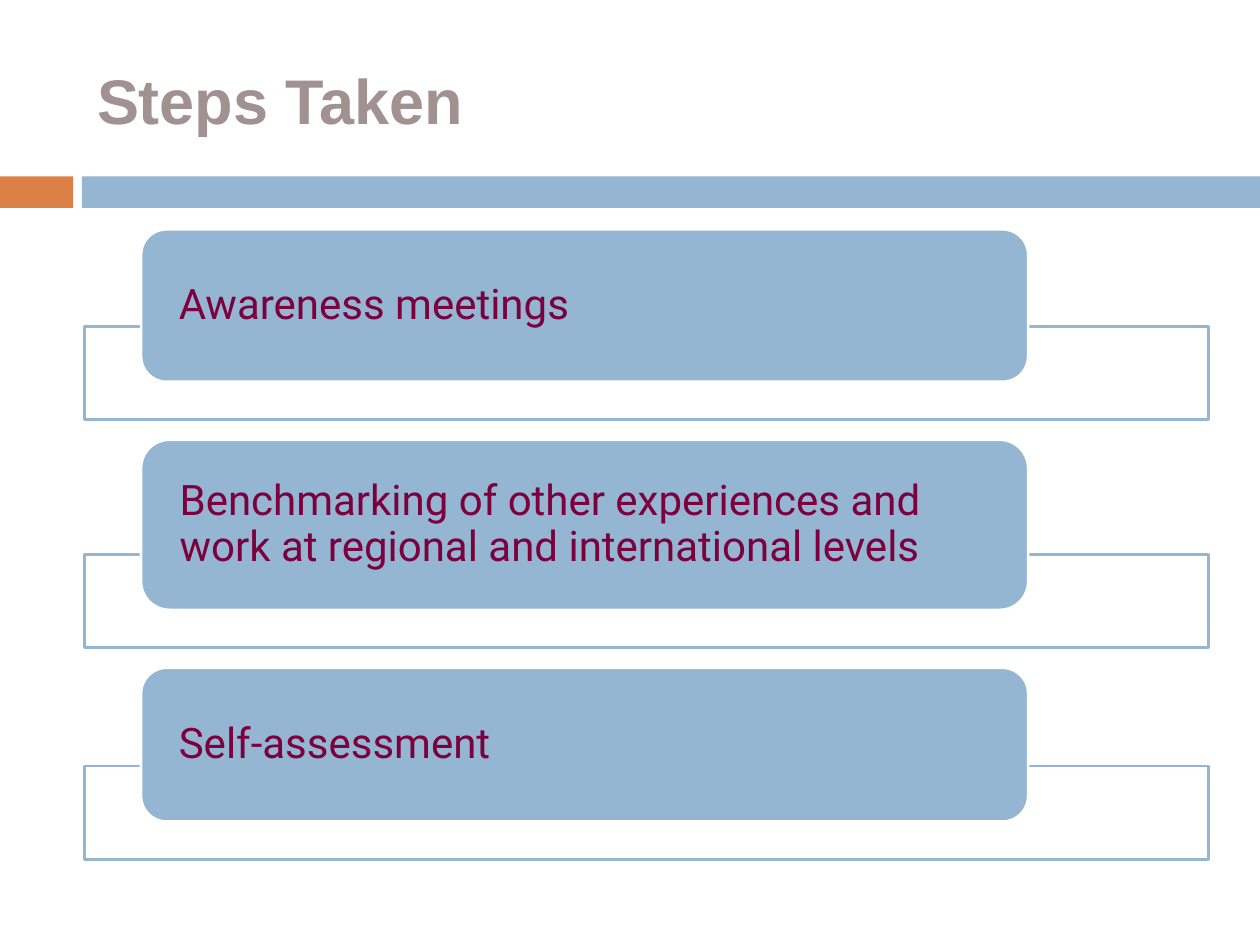
import pptx
import pptx.util
import pptx.dml.color
import pptx.enum.shapes
import pptx.enum.text

Inches = pptx.util.Inches
Pt = pptx.util.Pt
MSO_SHAPE = pptx.enum.shapes.MSO_SHAPE
MSO_ANCHOR = pptx.enum.text.MSO_ANCHOR
PP_ALIGN = pptx.enum.text.PP_ALIGN

TITLE_ONLY_LAYOUT = 5


def rgb(hex_string):
    return pptx.dml.color.RGBColor.from_string(hex_string)


class SlideBuilder:
    BLUE = "94B6D2"
    ORANGE = "DD8047"
    WHITE = "FFFFFF"
    TITLE_COLOR = "A19191"
    STEP_COLOR = "7B003B"
    FRAME_LEFT, FRAME_WIDTH, FRAME_HEIGHT = 0.67, 8.92, 0.74
    STEP_LEFT, STEP_WIDTH = 1.12, 7.04
    OVERLAP = 0.44  # how far a step box reaches into its frame

    def __init__(self, presentation):
        layout = presentation.slide_layouts[TITLE_ONLY_LAYOUT]
        self.slide = presentation.slides.add_slide(layout)

    def add_run(self, paragraph, text, font_name, size, color, bold=False):
        run = paragraph.add_run()
        run.text = text
        run.font.name = font_name
        run.font.size = Pt(size)
        run.font.bold = bold
        run.font.color.rgb = rgb(color)

    def title(self, text, left, top, width, height):
        title = self.slide.shapes.title
        title.left, title.top = Inches(left), Inches(top)
        title.width, title.height = Inches(width), Inches(height)
        title.text_frame.vertical_anchor = MSO_ANCHOR.MIDDLE
        paragraph = title.text_frame.paragraphs[0]
        paragraph.alignment = PP_ALIGN.LEFT
        self.add_run(paragraph, text, "Arial", 36, self.TITLE_COLOR, bold=True)

    def box(self, kind, left, top, width, height, fill, line=None):
        shape = self.slide.shapes.add_shape(
            kind, Inches(left), Inches(top), Inches(width), Inches(height))
        shape.shadow.inherit = False
        shape.fill.solid()
        shape.fill.fore_color.rgb = rgb(fill)
        if line:
            shape.line.color.rgb = rgb(line)
            shape.line.width = Pt(1.5)
        else:
            shape.line.fill.background()
        return shape

    def step(self, text, top, height):
        """Draw an outlined frame with a rounded, labelled box over its top edge."""
        self.box(MSO_SHAPE.RECTANGLE, self.FRAME_LEFT, top + height - self.OVERLAP,
                 self.FRAME_WIDTH, self.FRAME_HEIGHT, self.WHITE, self.BLUE)
        shape = self.box(MSO_SHAPE.ROUNDED_RECTANGLE, self.STEP_LEFT, top,
                         self.STEP_WIDTH, height, self.BLUE, self.WHITE)
        text_frame = shape.text_frame
        text_frame.word_wrap = True
        text_frame.vertical_anchor = MSO_ANCHOR.MIDDLE
        text_frame.margin_left = text_frame.margin_right = Inches(0.24)
        text_frame.margin_top = text_frame.margin_bottom = 0
        paragraph = text_frame.paragraphs[0]
        paragraph.alignment = PP_ALIGN.LEFT
        paragraph.line_spacing = 0.9
        self.add_run(paragraph, text, "Roboto", 24, self.STEP_COLOR)


def main():
    presentation = pptx.Presentation()
    presentation.slide_width = Inches(10)
    presentation.slide_height = Inches(7.5)

    builder = SlideBuilder(presentation)
    builder.box(MSO_SHAPE.RECTANGLE, 0, 1.4, 0.58, 0.25, builder.ORANGE)
    builder.box(MSO_SHAPE.RECTANGLE, 0.65, 1.4, 9.35, 0.25, builder.BLUE)
    builder.title("Steps Taken", 0.67, 0.25, 8.92, 1.08)

    steps = [
        ("Awareness meetings", 1.21),
        ("Benchmarking of other experiences and work at regional and "
         "international levels", 1.35),
        ("Self-assessment", 1.22),
    ]
    top, gap = 1.82, 0.46
    for text, height in steps:
        builder.step(text, top, height)
        top += height + gap

    presentation.save("out.pptx")


if __name__ == "__main__":
    main()
